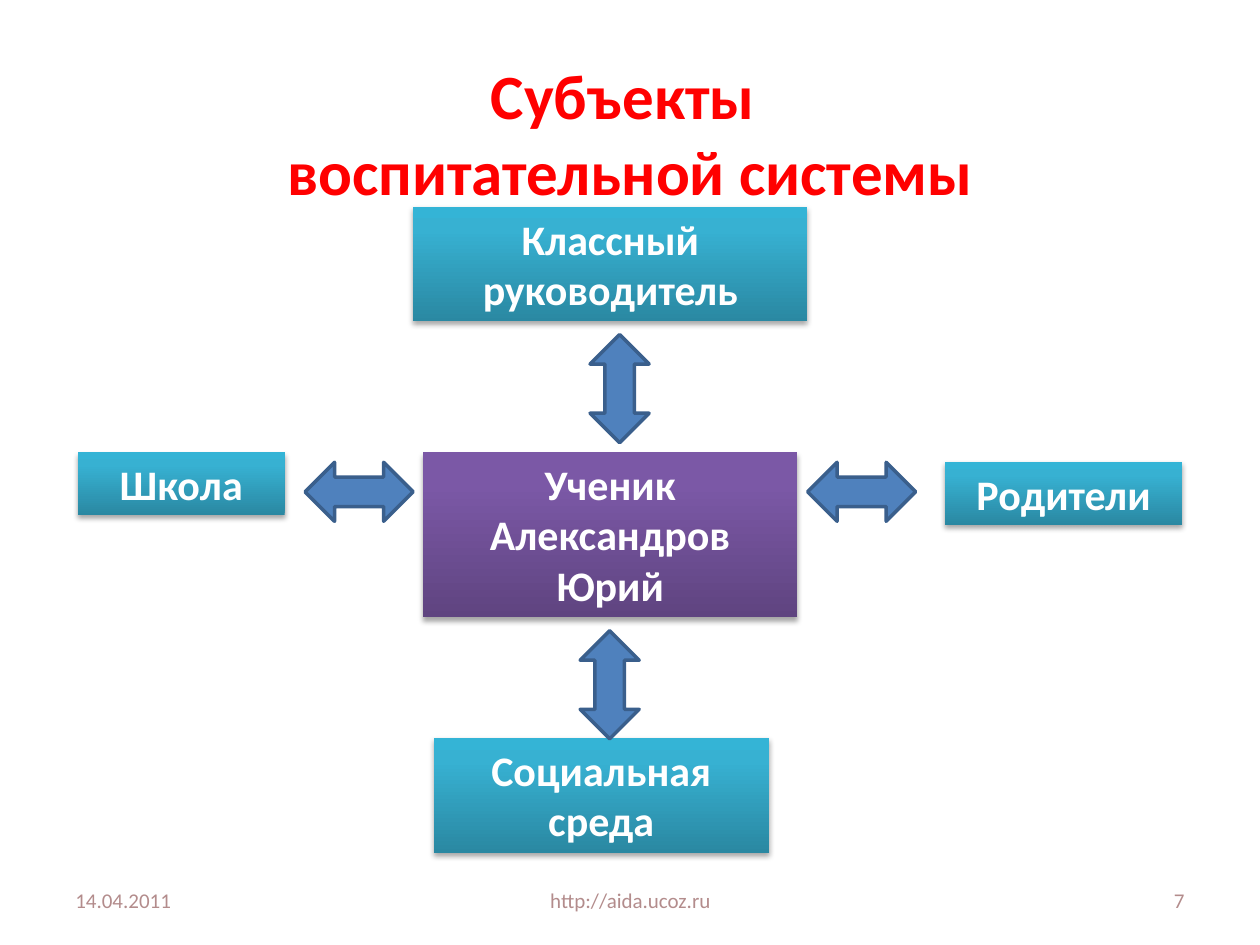
"""Build the slide on the participants of the educational system."""
from copy import deepcopy

from lxml import etree
from pptx import Presentation
from pptx.dml.color import RGBColor
from pptx.enum.shapes import MSO_SHAPE
from pptx.enum.text import MSO_ANCHOR, MSO_AUTO_SIZE, PP_ALIGN
from pptx.oxml.ns import qn
from pptx.util import Cm, Pt

RED = RGBColor(0xFF, 0x00, 0x00)
WHITE = RGBColor(0xFF, 0xFF, 0xFF)
ROSE = RGBColor(0xB3, 0x8C, 0x8C)
ARROW_BLUE = RGBColor(0x4F, 0x81, 0xBD)
ARROW_EDGE = RGBColor(0x3A, 0x5F, 0x8C)
TEAL = [RGBColor(0x2A, 0x88, 0xA2), RGBColor(0x37, 0xB1, 0xD2), RGBColor(0x34, 0xB4, 0xD6)]
PURPLE = [RGBColor(0x5F, 0x44, 0x80), RGBColor(0x7B, 0x58, 0xA6), RGBColor(0x7C, 0x57, 0xA8)]


def format_text(shape, size, color, alignment, bold=False):
    for paragraph in shape.text_frame.paragraphs:
        paragraph.alignment = alignment
        for run in paragraph.runs:
            run.font.name = "Calibri"
            run.font.size = Pt(size)
            run.font.bold = bold
            run.font.color.rgb = color


def style_box(shape, colors):
    shape.line.fill.background()
    shape.fill.gradient()
    shape.fill.gradient_angle = 90
    stop_list = shape.fill._fill._gradFill.find(qn("a:gsLst"))
    stop_list.insert(1, deepcopy(stop_list[0]))
    for stop, position, color in zip(shape.fill.gradient_stops, (0, 0.8, 1), colors):
        stop.position = position
        stop.color.rgb = color
    shape.shadow.inherit = False
    effects = shape._element.spPr.find(qn("a:effectLst"))
    shadow = etree.SubElement(effects, qn("a:outerShdw"), blurRad=str(Pt(3.1)),
                              dist=str(Pt(1.8)), dir="5400000", rotWithShape="0")
    shadow_color = etree.SubElement(shadow, qn("a:srgbClr"), val="000000")
    etree.SubElement(shadow_color, qn("a:alpha"), val="35000")


presentation = Presentation()
presentation.slide_width = Cm(25.4)
presentation.slide_height = Cm(19.05)
slide = presentation.slides.add_slide(presentation.slide_layouts[5])

title = slide.shapes.title
title.left, title.top, title.width, title.height = Cm(1.27), Cm(1.78), Cm(22.86), Cm(1.78)
title.text_frame.text = "Субъекты \vвоспитательной системы"
title.text_frame.auto_size = MSO_AUTO_SIZE.NONE
title.text_frame.vertical_anchor = MSO_ANCHOR.MIDDLE
format_text(title, 36, RED, PP_ALIGN.CENTER, bold=True)

footers = [
    ("14.04.2011", 1.27, 5.93, PP_ALIGN.LEFT),
    ("http://aida.ucoz.ru", 8.69, 8.04, PP_ALIGN.CENTER),
    ("7", 18.2, 5.93, PP_ALIGN.RIGHT),
]
for text, left, width, alignment in footers:
    footer = slide.shapes.add_textbox(Cm(left), Cm(17.65), Cm(width), Cm(1.01))
    footer.text_frame.text = text
    footer.text_frame.word_wrap = True
    footer.text_frame.vertical_anchor = MSO_ANCHOR.MIDDLE
    format_text(footer, 12, ROSE, alignment)

participants = [
    ("Классный руководитель", 8.33, 4.17, 7.95, 2.31, TEAL),
    ("Ученик\nАлександров Юрий", 8.53, 9.12, 7.54, 3.33, PURPLE),
    ("Школа", 1.57, 9.12, 4.17, 1.27, TEAL),
    ("Родители", 19.05, 9.32, 4.78, 1.27, TEAL),
    ("Социальная среда", 8.74, 14.88, 6.76, 2.31, TEAL),
]
for text, left, top, width, height, colors in participants:
    box = slide.shapes.add_shape(MSO_SHAPE.RECTANGLE, Cm(left), Cm(top), Cm(width), Cm(height))
    style_box(box, colors)
    box.text_frame.text = text
    box.text_frame.word_wrap = True
    box.text_frame.auto_size = MSO_AUTO_SIZE.SHAPE_TO_FIT_TEXT
    box.text_frame.vertical_anchor = MSO_ANCHOR.TOP
    format_text(box, 24, WHITE, PP_ALIGN.CENTER, bold=True)

arrows = [(6.15, 9.32, 0), (16.28, 9.32, 0), (11.4, 7.24, 90), (11.2, 13.21, 90)]
for left, top, rotation in arrows:
    arrow = slide.shapes.add_shape(MSO_SHAPE.LEFT_RIGHT_ARROW, Cm(left), Cm(top), Cm(2.18), Cm(1.19))
    arrow.rotation = rotation
    arrow.shadow.inherit = False
    arrow.fill.solid()
    arrow.fill.fore_color.rgb = ARROW_BLUE
    arrow.line.color.rgb = ARROW_EDGE
    arrow.line.width = Pt(2)

presentation.save("out.pptx")
